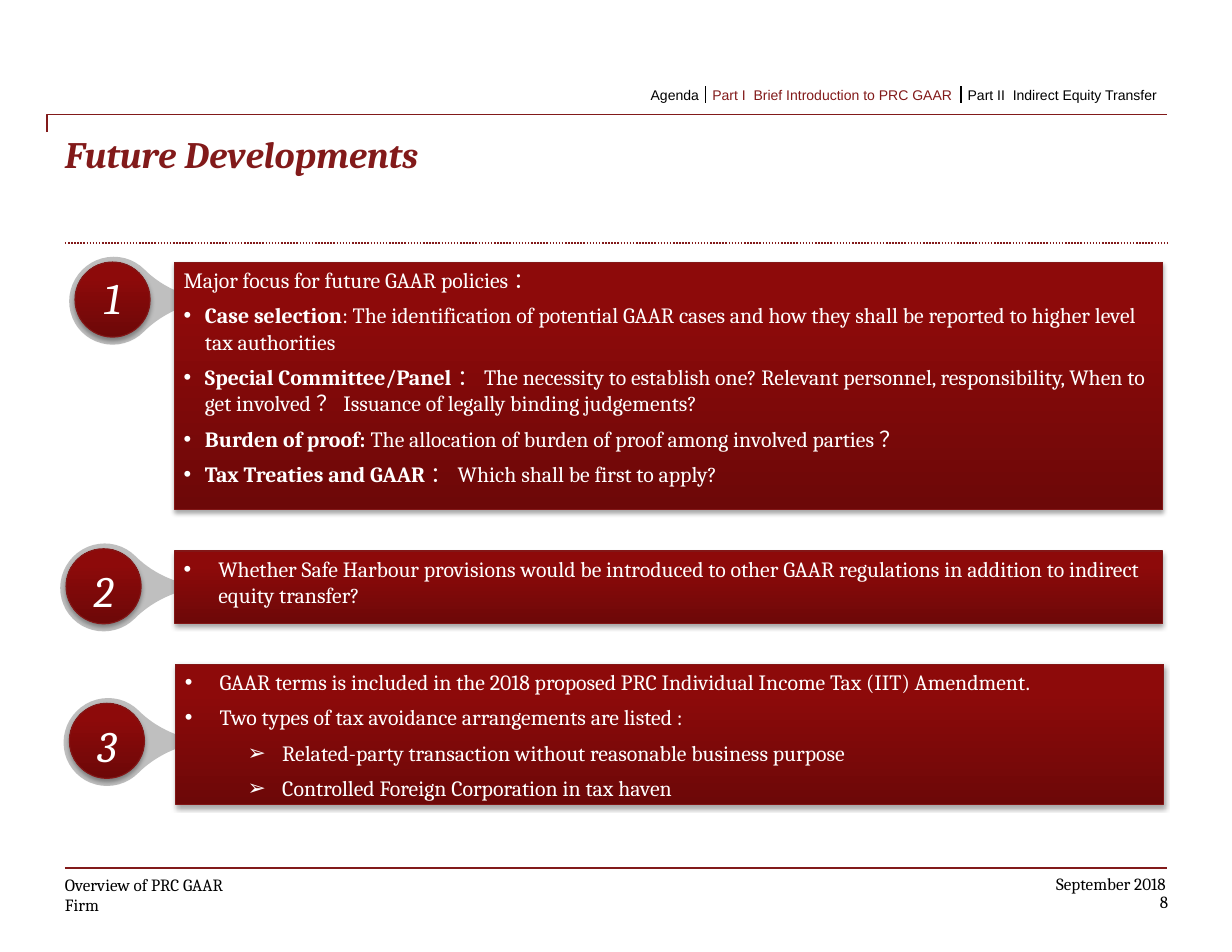
from copy import deepcopy
from lxml.etree import SubElement
from pptx import Presentation
from pptx.dml.color import RGBColor
from pptx.enum.dml import MSO_LINE
from pptx.enum.shapes import MSO_CONNECTOR, MSO_SHAPE
from pptx.enum.text import MSO_ANCHOR, PP_ALIGN
from pptx.oxml.ns import qn
from pptx.util import Inches, Pt

BLACK = RGBColor(0x00, 0x00, 0x00)
WHITE = RGBColor(0xFF, 0xFF, 0xFF)
MAROON = RGBColor(0x82, 0x1A, 0x1A)
EDGE = RGBColor(0x82, 0x17, 0x17)
GREY = RGBColor(0xBF, 0xBF, 0xBF)
GRADIENT = [(0, RGBColor(0x6D, 0x08, 0x08)),
            (0.8, RGBColor(0x8D, 0x0A, 0x0A)),
            (1, RGBColor(0x90, 0x08, 0x08))]
PANEL_INSETS = (0.08, 0.04, 0.08, 0.08)

prs = Presentation()
prs.slide_width, prs.slide_height = Inches(11), Inches(8.5)
slide = prs.slides.add_slide(prs.slide_layouts[6])
shapes = slide.shapes


def write(sp, paragraphs, size=11, font="Cambria", color=BLACK, bold=False,
          italic=False, align=PP_ALIGN.LEFT, anchor=MSO_ANCHOR.TOP,
          insets=(0, 0, 0, 0), wrap=True, after=0, leading=None):
    """Fill sp with (bullet, left margin, hanging indent, bold lead, text) rows or one string."""
    if isinstance(paragraphs, str):
        paragraphs = [("", 0, 0, "", paragraphs)]
    tf = sp.text_frame
    tf.word_wrap, tf.vertical_anchor = wrap, anchor
    tf.margin_left, tf.margin_top, tf.margin_right, tf.margin_bottom = map(Inches, insets)
    for i, (bullet, left, hang, lead, text) in enumerate(paragraphs):
        p = tf.paragraphs[0] if i == 0 else tf.add_paragraph()
        p.alignment, p.space_after = align, Pt(after)
        if leading:
            p.line_spacing = Pt(leading)
        if bullet:
            pPr = p._p.get_or_add_pPr()
            pPr.set("marL", str(Inches(left)))
            pPr.set("indent", str(-Inches(hang)))
            SubElement(pPr, qn("a:buFont"), typeface="Arial")
            SubElement(pPr, qn("a:buChar"), char=bullet)
        for part, heavy in ((lead, True), (text, bold)):
            if part:
                r = p.add_run()
                r.text = part
                r.font.name, r.font.size = font, Pt(size)
                r.font.bold, r.font.italic = heavy, italic
                r.font.color.rgb = color


def add_red(kind, x, y, w, h):
    """Add a shape with the red gradient, thin edge and soft shadow."""
    sp = shapes.add_shape(kind, Inches(x), Inches(y), Inches(w), Inches(h))
    sp.fill.gradient()
    sp.fill.gradient_angle = 90
    stops = sp._element.spPr.find(qn("a:gradFill")).find(qn("a:gsLst"))
    stops.append(deepcopy(stops[0]))
    for stop, (position, color) in zip(sp.fill.gradient_stops, GRADIENT):
        stop.position, stop.color.rgb = position, color
    sp.line.color.rgb, sp.line.width = EDGE, Pt(0.75)
    sp.shadow.inherit = False
    effects = sp._element.spPr.find(qn("a:effectLst"))
    shadow = SubElement(effects, qn("a:outerShdw"), blurRad=str(Pt(3.1)),
                        dist=str(Pt(1.8)), dir="5400000", rotWithShape="0")
    color = SubElement(shadow, qn("a:srgbClr"), val="000000")
    SubElement(color, qn("a:alpha"), val="35000")
    return sp


# Rules: header bracket, dotted title rule, footer rule, navigation dividers
for kind, x1, y1, x2, y2, color, width, dash in [
    (MSO_CONNECTOR.ELBOW, 0.42, 1.18, 10.42, 1.02, MAROON, 0.75, None),
    (MSO_CONNECTOR.STRAIGHT, 0.58, 2.17, 10.42, 2.17, MAROON, 1, MSO_LINE.ROUND_DOT),
    (MSO_CONNECTOR.STRAIGHT, 0.58, 7.75, 10.42, 7.75, MAROON, 0.75, None),
    (MSO_CONNECTOR.STRAIGHT, 6.3, 0.77, 6.3, 0.92, BLACK, 1, None),
    (MSO_CONNECTOR.STRAIGHT, 8.58, 0.77, 8.58, 0.92, BLACK, 1, None),
]:
    line = shapes.add_connector(kind, Inches(x1), Inches(y1), Inches(x2), Inches(y2))
    line.line.color.rgb, line.line.width = color, Pt(width)
    if dash:
        line.line.dash_style = dash
    spPr = line._element.spPr
    SubElement(spPr, qn("a:effectLst"))
    if kind == MSO_CONNECTOR.ELBOW:
        guides = spPr.find(qn("a:prstGeom")).find(qn("a:avLst"))
        SubElement(guides, qn("a:gd"), name="adj1", fmla="val 0")

# Title, navigation and footer text
nav = dict(size=9, font="Arial", insets=(0.03, 0, 0.03, 0), wrap=False)
for x, y, w, h, text, style in [
    (0.58, 1.17, 9.84, 0.92, "Future Developments",
     dict(size=24, color=MAROON, bold=True, italic=True)),
    (5.78, 0.77, 0.5, 0.15, "Agenda", nav),
    (6.33, 0.77, 2.22, 0.15, "Part I  Brief Introduction to PRC GAAR",
     dict(nav, color=MAROON)),
    (8.61, 0.77, 1.81, 0.15, "Part II  Indirect Equity Transfer", nav),
    (0.58, 7.8, 3.17, 0.19, "Overview of PRC GAAR", dict(anchor=MSO_ANCHOR.BOTTOM)),
    (0.58, 8.03, 0.6, 0.14, "Firm", dict(leading=10)),
    (9.3, 7.8, 1.11, 0.19, "September 2018", dict(align=PP_ALIGN.RIGHT, wrap=False)),
    (10.08, 8, 0.35, 0.17, "8", dict(align=PP_ALIGN.RIGHT, wrap=False, leading=10)),
]:
    write(shapes.add_textbox(Inches(x), Inches(y), Inches(w), Inches(h)), text, **style)

# Numbered panels: badge x, y, number anchor, panel x, y, height, paragraphs
panels = [
    (0.67, 2.34, MSO_ANCHOR.MIDDLE, 1.56, 2.34, 2.21, [
        ("", 0, 0, "", "Major focus for future GAAR policies："),
        ("•", 0.19, 0.19, "Case selection",
         ": The identification of potential GAAR cases and how they shall be "
         "reported to higher level tax authorities"),
        ("•", 0.19, 0.19, "Special Committee/Panel",
         "：The necessity to establish one? Relevant personnel, responsibility, "
         "When to get involved？Issuance of legally binding judgements?"),
        ("•", 0.19, 0.19, "Burden of proof: ",
         "The allocation of burden of proof among involved parties？"),
        ("•", 0.19, 0.19, "Tax Treaties and GAAR", "：Which shall be first to apply?"),
    ]),
    (0.59, 4.9, MSO_ANCHOR.TOP, 1.56, 4.92, 0.65, [
        ("•", 0.31, 0.31, "",
         "Whether Safe Harbour provisions would be introduced to other GAAR "
         "regulations in addition to indirect equity transfer?"),
    ]),
    (0.62, 6.28, MSO_ANCHOR.TOP, 1.57, 5.93, 1.25, [
        ("•", 0.31, 0.31, "",
         "GAAR terms is included in the 2018 proposed PRC Individual Income Tax "
         "(IIT) Amendment."),
        ("•", 0.31, 0.31, "", "Two types of tax avoidance arrangements are listed :"),
        ("➢", 0.87, 0.31, "", "Related-party transaction without reasonable business purpose"),
        ("➢", 0.87, 0.31, "", "Controlled Foreign Corporation in tax haven"),
    ]),
]
for number, (bx, by, anchor, x, y, h, paragraphs) in enumerate(panels, 1):
    # Grey pointer behind the badge
    drop = shapes.add_shape(MSO_SHAPE.TEAR, Inches(bx - 0.05), Inches(by - 0.05),
                            Inches(0.78), Inches(0.79))
    drop.adjustments[0] = 1.51
    drop.rotation = 45
    drop.fill.solid()
    drop.fill.fore_color.rgb = GREY
    drop.line.fill.background()
    drop.shadow.inherit = False
    # Panel and badge
    write(add_red(MSO_SHAPE.RECTANGLE, x, y, 8.82, h), paragraphs, size=14,
          color=WHITE, insets=PANEL_INSETS, after=6)
    write(add_red(MSO_SHAPE.OVAL, bx, by, 0.67, 0.67), str(number), size=28,
          color=WHITE, italic=True, align=PP_ALIGN.CENTER, anchor=anchor,
          insets=PANEL_INSETS)

prs.save("out.pptx")
